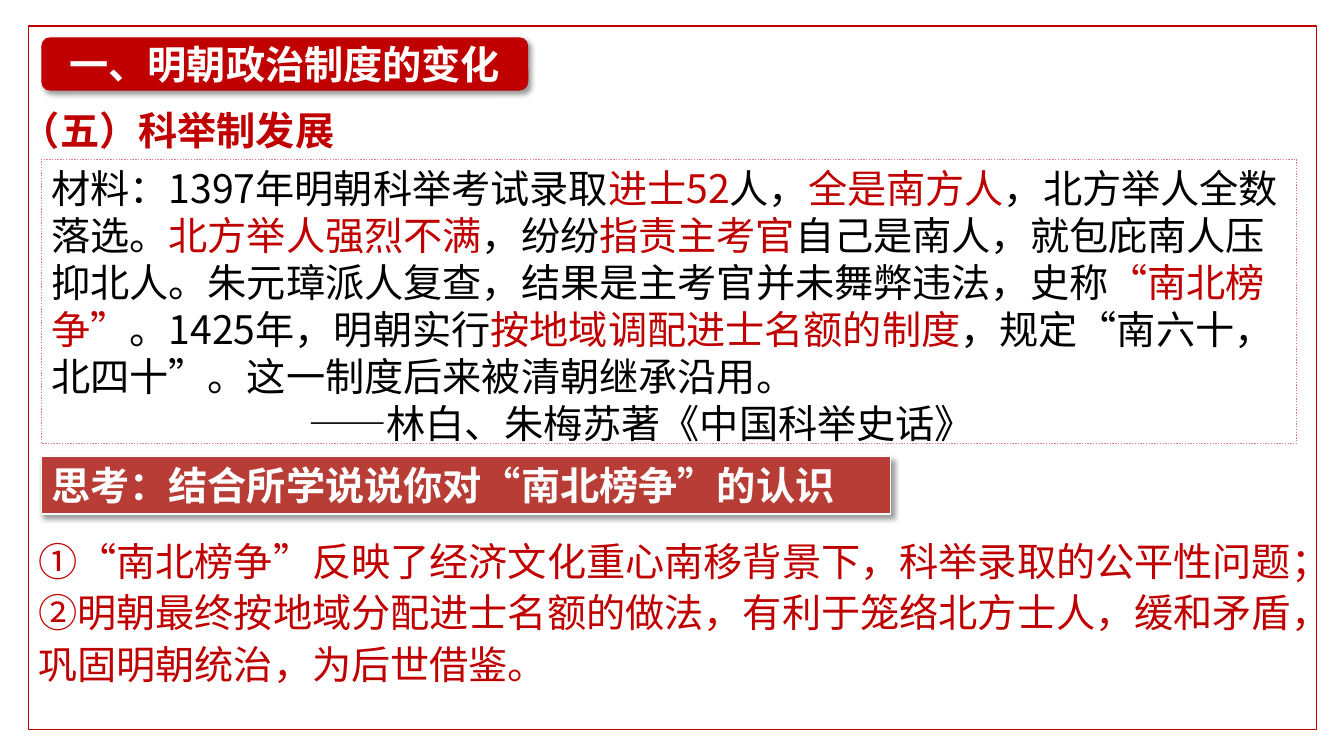
from dataclasses import dataclass

from lxml.etree import SubElement
from pptx import Presentation
from pptx.dml.color import RGBColor
from pptx.enum.dml import MSO_LINE
from pptx.enum.shapes import MSO_SHAPE as Shape
from pptx.enum.text import MSO_ANCHOR as Anchor, MSO_AUTO_SIZE as AutoSize, PP_ALIGN as Align
from pptx.oxml.ns import qn
from pptx.util import Inches, Pt


@dataclass(frozen=True)
class Theme:
    red: str = "C00000"
    brick: str = "B83D36"
    pink: str = "E07C83"
    black: str = "000000"
    white: str = "FFFFFF"
    font: str = "Noto Sans CJK SC"
    size: int = 28
    line: float = 1


THEME = Theme()

# Text between bars is highlighted in red.
MATERIAL = (
    "材料：1397年明朝科举考试录取|进士52|人，|全是南方人|，北方举人全数落选。|北方举人强烈不满|，纷纷|指责主考官|"
    "自己是南人，就包庇南人压抑北人。朱元璋派人复查，结果是主考官并未舞弊违法，史称|“南北榜争”|。1425年，明朝实行|"
    "按地域调配进士名额的制度|，规定“南六十，北四十”。这一制度后来被清朝继承沿用。"
)
CITATION = "——林白、朱梅苏著《中国科举史话》"
ANSWERS = (
    "①“南北榜争”反映了经济文化重心南移背景下，科举录取的公平性问题；",
    "②明朝最终按地域分配进士名额的做法，有利于笼络北方士人，缓和矛盾，巩固明朝统治，为后世借鉴。",
)


def rgb(name):
    return RGBColor.from_string(name)


def add_shadow(shape):
    effects = shape._element.spPr.find(qn("a:effectLst"))
    shadow = SubElement(effects, qn("a:outerShdw"), blurRad=str(Pt(4)), dist=str(Pt(3)),
                        dir=str(45 * 60000), algn="tl", rotWithShape="0")
    color = SubElement(shadow, qn("a:srgbClr"), val=THEME.black)
    SubElement(color, qn("a:alpha"), val="40000")


def add_panel(page, box, fill=None, line=None, kind=Shape.RECTANGLE, shadow=False):
    panel = page.shapes.add_shape(kind, *map(Inches, box))
    panel.shadow.inherit = False
    if fill:
        panel.fill.solid()
        panel.fill.fore_color.rgb = rgb(fill)
    else:
        panel.fill.background()
    if line:
        panel.line.color.rgb = rgb(line)
        panel.line.width = Pt(THEME.line)
    else:
        panel.line.fill.background()
    if shadow:
        add_shadow(panel)
    return panel


def write(shape, texts, color, bold=False, align=Align.LEFT, anchor=Anchor.TOP, spacing=None, accent=None):
    """Fill the shape with paragraphs; every second part split by a bar takes the accent colour."""
    frame = shape.text_frame
    frame.word_wrap = True
    frame.vertical_anchor = anchor
    for index, text in enumerate(texts):
        para = frame.add_paragraph() if index else frame.paragraphs[0]
        para.alignment = align
        para.line_spacing = spacing
        para.font.name = THEME.font
        para.font.size = Pt(THEME.size)
        para.font.bold = bold
        para.font.color.rgb = rgb(color)
        SubElement(para.font._element, qn("a:ea"), typeface=THEME.font)
        for part, words in enumerate(text.split("|")):
            span = para.add_run()
            span.text = words
            span.font.color.rgb = rgb(accent if part % 2 else color)
    return frame


def add_label(page, box, texts, color, **style):
    label = page.shapes.add_textbox(*map(Inches, box))
    write(label, texts, color, **style).auto_size = AutoSize.SHAPE_TO_FIT_TEXT


def add_title(page, box):
    title = add_panel(page, box, fill=THEME.red, kind=Shape.ROUNDED_RECTANGLE, shadow=True)
    write(title, ["一、明朝政治制度的变化"], THEME.white, bold=True, align=Align.CENTER, anchor=Anchor.MIDDLE)


def add_material(page, box):
    panel = add_panel(page, box, line=THEME.pink)
    panel.line.dash_style = MSO_LINE.ROUND_DOT
    frame = write(panel, [MATERIAL, CITATION], THEME.black, accent=THEME.red)
    citation = frame.paragraphs[1]._p.get_or_add_pPr()
    citation.set("marL", str(Inches(2.55)))
    citation.set("indent", "0")


def add_question(page, box):
    banner = add_panel(page, box, fill=THEME.brick, line=THEME.white, shadow=True)
    frame = write(banner, ["思考：结合所学说说你对“南北榜争”的认识"], THEME.white, bold=True)
    frame.auto_size = AutoSize.SHAPE_TO_FIT_TEXT


def main():
    deck = Presentation()
    deck.slide_width, deck.slide_height = Inches(13.33), Inches(7.5)
    page = deck.slides.add_slide(deck.slide_layouts[6])
    left, edge, width = 0.41, 0.28, 12.78
    add_panel(page, (edge, 0.26, width, 6.98), line=THEME.red)
    add_title(page, (left, 0.37, 4.83, 0.53))
    add_label(page, (0.11, 1.01, 4.51, 0.57), ["（五）科举制发展"], THEME.red, bold=True)
    add_material(page, (left, 1.58, 12.45, 2.82))
    add_question(page, (left, 4.53, 8.42, 0.57))
    add_label(page, (edge, 5.23, width, 1.65), ANSWERS, THEME.red, spacing=1.1)
    deck.save("out.pptx")


if __name__ == "__main__":
    main()
